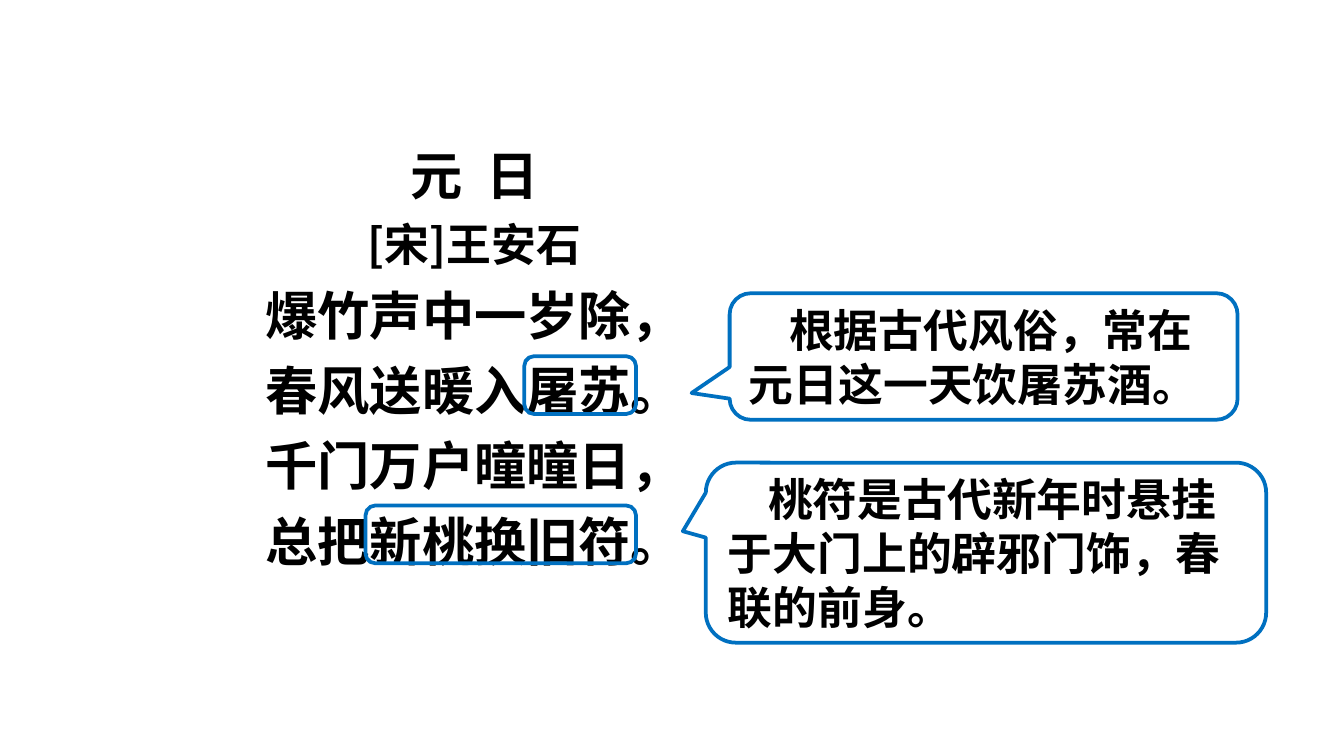
from dataclasses import dataclass

import pptx
import pptx.dml.color
import pptx.enum.shapes
import pptx.enum.text
import pptx.oxml
import pptx.oxml.ns
import pptx.util

Cm = pptx.util.Cm
Pt = pptx.util.Pt
Align = pptx.enum.text.PP_ALIGN
Anchor = pptx.enum.text.MSO_ANCHOR
Kind = pptx.enum.shapes.MSO_SHAPE

BLACK = pptx.dml.color.RGBColor(0x00, 0x00, 0x00)
BLUE = pptx.dml.color.RGBColor(0x00, 0x70, 0xC0)
FONT = "Noto Sans CJK SC"


@dataclass
class Box:
    left: float
    top: float
    width: float
    height: float

    def place(self) -> tuple:
        return Cm(self.left), Cm(self.top), Cm(self.width), Cm(self.height)


@dataclass
class Note:
    box: Box
    tail: tuple
    text: str


# Poem lines with their sizes; \v breaks a line within a paragraph
POEM = [
    ("元  日", 28),
    ("[宋]王安石", 24),
    ("爆竹声中一岁除，", 28),
    ("春风送暖入屠苏。\v千门万户曈曈日，", 28),
    ("总把新桃换旧符。", 28),
]

# Frames around the explained words
MARKS = [Box(9.91, 6.73, 2.11, 1.09), Box(6.91, 9.55, 5.11, 1.09)]

NOTES = [
    Note(Box(13.79, 5.54, 9.6, 2.39), (-0.575, 0.289),
         "根据古代风俗，常在元日这一天饮屠苏酒。"),
    Note(Box(13.34, 8.74, 10.59, 3.4), (-0.541, -0.119),
         "桃符是古代新年时悬挂于大门上的辟邪门饰，春联的前身。"),
]


def write(para, text: str, *, size: float, align=Align.LEFT,
          space: float = 1.0, indent: float = 0) -> None:
    """Fill a paragraph with bold text in the slide's font."""
    para.text = text
    para.alignment = align
    para.line_spacing = space
    if indent:
        para._p.get_or_add_pPr().set("indent", str(Cm(indent)))
    for run in para.runs:
        font = run.font
        font.name, font.size, font.bold = FONT, Pt(size), True
        font.color.rgb = BLACK
        east = pptx.oxml.parse_xml(
            f'<a:ea {pptx.oxml.ns.nsdecls("a")} typeface="{FONT}"/>')
        run._r.get_or_add_rPr().find(
            pptx.oxml.ns.qn("a:latin")).addnext(east)


def frame(slide, kind, box: Box):
    """Draw an unfilled shape with a blue outline."""
    shape = slide.shapes.add_shape(kind, *box.place())
    shape.shadow.inherit = False
    shape.fill.background()
    shape.line.color.rgb = BLUE
    shape.line.width = Pt(2)
    return shape


def poem(slide, box: Box) -> None:
    body = slide.shapes.add_textbox(*box.place()).text_frame
    body.word_wrap = True
    body.auto_size = pptx.enum.text.MSO_AUTO_SIZE.SHAPE_TO_FIT_TEXT
    for i, (text, size) in enumerate(POEM):
        para = body.add_paragraph() if i else body.paragraphs[0]
        write(para, text, size=size, align=Align.CENTER, space=1.2)


def callout(slide, note: Note) -> None:
    shape = frame(slide, Kind.ROUNDED_RECTANGULAR_CALLOUT, note.box)
    for i, value in enumerate((*note.tail, 0.167)):
        shape.adjustments[i] = value
    body = shape.text_frame
    body.word_wrap = True
    body.vertical_anchor = Anchor.MIDDLE
    write(body.paragraphs[0], note.text, size=24, indent=0.76)


def main() -> None:
    deck = pptx.Presentation()
    deck.slide_width, deck.slide_height = Cm(25.4), Cm(14.28)
    slide = deck.slides.add_slide(deck.slide_layouts.get_by_name("Blank"))

    # Poem, marked words, then their explanations
    poem(slide, Box(4.09, 2.34, 9.75, 8.86))
    for mark in MARKS:
        frame(slide, Kind.ROUNDED_RECTANGLE, mark)
    for note in NOTES:
        callout(slide, note)

    deck.save("out.pptx")


if __name__ == "__main__":
    main()
